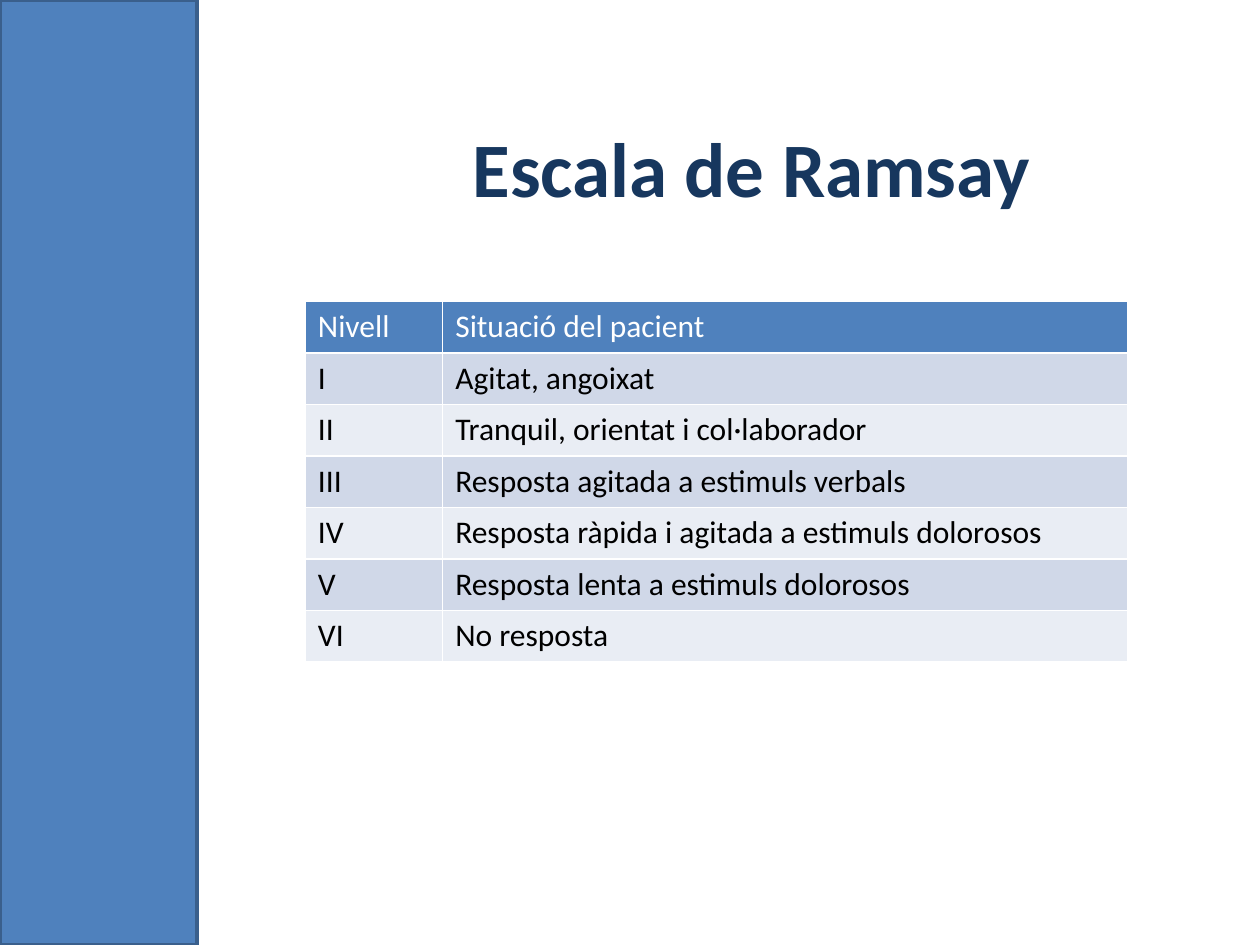
from pptx import Presentation
from pptx.dml.color import RGBColor
from pptx.enum.shapes import MSO_SHAPE
from pptx.enum.text import MSO_ANCHOR, PP_ALIGN
from pptx.util import Pt

WHITE = RGBColor(0xFF, 0xFF, 0xFF)
BLACK = RGBColor(0x00, 0x00, 0x00)
NAVY = RGBColor(0x17, 0x37, 0x5E)
BLUE = RGBColor(0x4F, 0x81, 0xBD)
BLUE_EDGE = RGBColor(0x3A, 0x5F, 0x8C)
BAND_DARK = RGBColor(0xD0, 0xD8, 0xE8)
BAND_LIGHT = RGBColor(0xE9, 0xED, 0xF4)

RAMSAY_ROWS = [
    ("Nivell", "Situació del pacient"),
    ("I", "Agitat, angoixat"),
    ("II", "Tranquil, orientat i col·laborador"),
    ("III", "Resposta agitada a estimuls verbals"),
    ("IV", "Resposta ràpida i agitada a estimuls dolorosos"),
    ("V", "Resposta lenta a estimuls dolorosos"),
    ("VI", "No resposta"),
]
COLUMN_WIDTHS = (78.5, 391.5)
ROW_HEIGHT = 29.45
CONTENT_LEFT = 174.5


def write_text(text_frame, text, size=18, color=BLACK, bold=False, align=PP_ALIGN.LEFT):
    paragraph = text_frame.paragraphs[0]
    paragraph.alignment = align
    run = paragraph.add_run()
    run.text = text
    run.font.name = "Calibri"
    run.font.size = Pt(size)
    run.font.bold = bold
    run.font.color.rgb = color


presentation = Presentation()
presentation.slide_width = Pt(720)
presentation.slide_height = Pt(540)
slide = presentation.slides.add_slide(presentation.slide_layouts[5])

# Title
title = slide.shapes.title
title.left, title.top = Pt(CONTENT_LEFT), Pt(50.5)
title.width, title.height = Pt(510), Pt(90)
title.text_frame.vertical_anchor = MSO_ANCHOR.MIDDLE
write_text(title.text_frame, "Escala de Ramsay", size=44, color=NAVY, bold=True,
           align=PP_ALIGN.CENTER)

# Sedation scale; the default table style supplies the white borders
table = slide.shapes.add_table(
    len(RAMSAY_ROWS), len(COLUMN_WIDTHS), Pt(CONTENT_LEFT), Pt(172.25),
    Pt(sum(COLUMN_WIDTHS)), Pt(ROW_HEIGHT * len(RAMSAY_ROWS))).table
for column, width in zip(table.columns, COLUMN_WIDTHS):
    column.width = Pt(width)
for row_index, row_texts in enumerate(RAMSAY_ROWS):
    table.rows[row_index].height = Pt(ROW_HEIGHT)
    if row_index == 0:
        fill_color, text_color = BLUE, WHITE
    else:
        fill_color = BAND_DARK if row_index % 2 else BAND_LIGHT
        text_color = BLACK
    for column_index, text in enumerate(row_texts):
        cell = table.cell(row_index, column_index)
        cell.fill.solid()
        cell.fill.fore_color.rgb = fill_color
        write_text(cell.text_frame, text, color=text_color)

# Side band
side_band = slide.shapes.add_shape(MSO_SHAPE.RECTANGLE, Pt(0), Pt(0), Pt(112.5), Pt(540))
side_band.shadow.inherit = False
side_band.fill.solid()
side_band.fill.fore_color.rgb = BLUE
side_band.line.color.rgb = BLUE_EDGE
side_band.line.width = Pt(2)

presentation.save("out.pptx")
